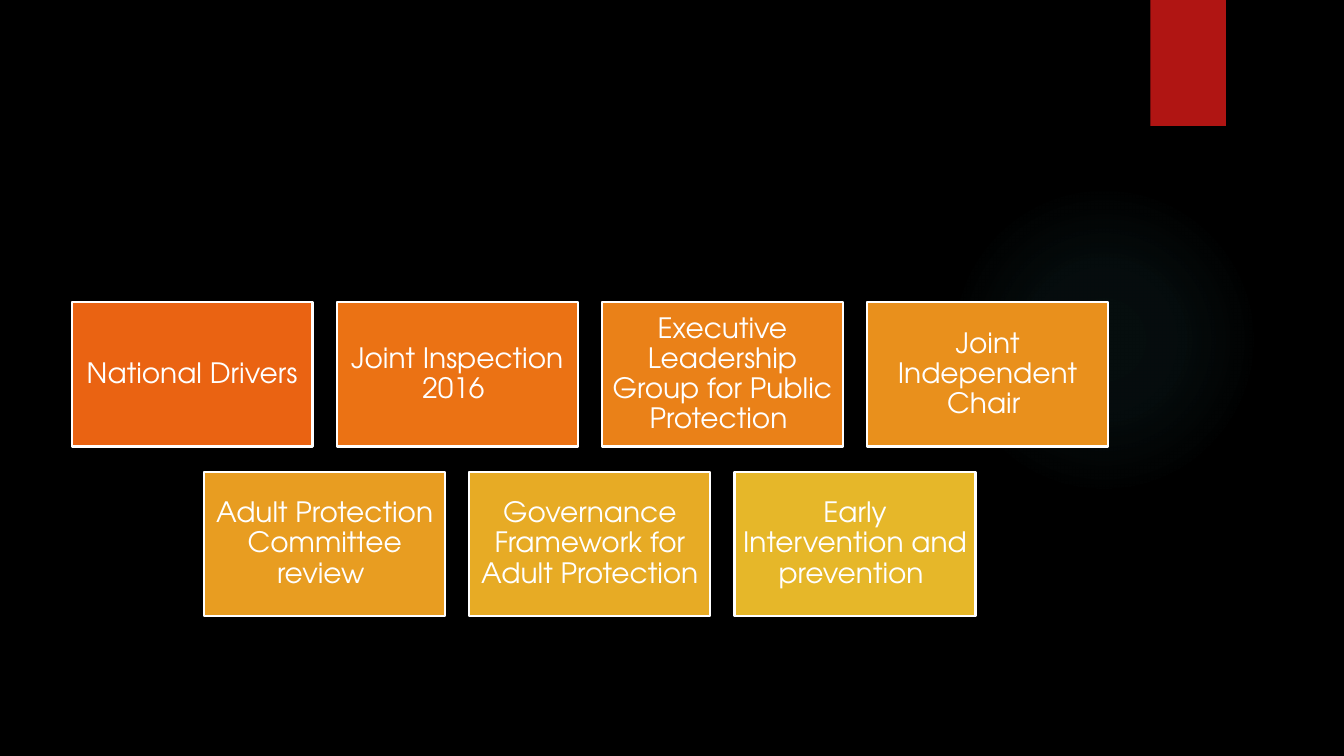
import pptx
import pptx.dml.color
import pptx.enum.shapes
import pptx.enum.text
import pptx.oxml
import pptx.oxml.ns
import pptx.util

WIDTH, HEIGHT = 13.33, 7.5
LEFT, TOP = 0.71, 3
CARD_W, CARD_H = 2.39, 1.43
STEP_X, STEP_Y = 2.63, 1.68
COLS = 4

COLORS = {"back": "000000", "flag": "B01513", "glow": "50B9C1", "text": "FFFFFF"}
GLOW_STOPS = [(0, 7), (36, 6), (69, 0), (100, 0)]

ROWS = [
    [
        ("National Drivers", "EA6312"),
        ("Joint Inspection 2016 ", "EB7214"),
        ("Executive Leadership Group for Public Protection ", "EA8118"),
        ("Joint Independent Chair ", "E9901C"),
    ],
    [
        ("Adult Protection Committee review ", "E89D21"),
        ("Governance Framework for Adult Protection ", "E7AB25"),
        ("Early Intervention and prevention ", "E6B729"),
    ],
]

FRAME = {
    "word_wrap": True,
    "vertical_anchor": pptx.enum.text.MSO_ANCHOR.MIDDLE,
    **{f"margin_{side}": pptx.util.Inches(0.08) for side in ("left", "top", "right", "bottom")},
}
PARA = {"alignment": pptx.enum.text.PP_ALIGN.CENTER, "line_spacing": 0.9}
FONT = {"name": "TeX Gyre Adventor", "size": pptx.util.Pt(20)}


def rgb(code):
    return pptx.dml.color.RGBColor.from_string(code)


def style(target, values):
    for name, value in values.items():
        setattr(target, name, value)


def add_shape(slide, kind, box):
    shape = slide.shapes.add_shape(kind, *map(pptx.util.Inches, box))
    shape.shadow.inherit = False
    shape.line.fill.background()
    return shape


def add_block(slide, box, color):
    block = add_shape(slide, pptx.enum.shapes.MSO_SHAPE.RECTANGLE, box)
    block.fill.solid()
    block.fill.fore_color.rgb = rgb(color)
    return block


def add_glow(slide, box):
    """Add a circle that fades from its centre to nothing."""
    glow = add_shape(slide, pptx.enum.shapes.MSO_SHAPE.OVAL, box)
    stops = "".join(
        f'<a:gs pos="{pos * 1000}"><a:srgbClr val="{COLORS["glow"]}">'
        f'<a:alpha val="{alpha * 1000}"/></a:srgbClr></a:gs>'
        for pos, alpha in GLOW_STOPS
    )
    fill = pptx.oxml.parse_xml(
        f'<a:gradFill {pptx.oxml.ns.nsdecls("a")}><a:gsLst>{stops}</a:gsLst>'
        '<a:path path="circle"><a:fillToRect l="50000" t="50000" r="50000" b="50000"/>'
        "</a:path></a:gradFill>"
    )
    glow.element.spPr.find(pptx.oxml.ns.qn("a:prstGeom")).addnext(fill)


def add_card(slide, col, row, text, color):
    box = (LEFT + col * STEP_X, TOP + row * STEP_Y, CARD_W, CARD_H)
    card = add_block(slide, box, color)
    card.line.color.rgb = rgb(COLORS["text"])
    card.line.width = pptx.util.Pt(1.5)
    style(card.text_frame, FRAME)
    para = card.text_frame.paragraphs[0]
    style(para, PARA)
    run = para.add_run()
    run.text = text
    style(run.font, FONT)
    run.font.color.rgb = rgb(COLORS["text"])


def main():
    deck = pptx.Presentation()
    deck.slide_width = pptx.util.Inches(WIDTH)
    deck.slide_height = pptx.util.Inches(HEIGHT)
    slide = deck.slides.add_slide(deck.slide_layouts[6])
    slide.background.fill.solid()
    slide.background.fill.fore_color.rgb = rgb(COLORS["back"])

    add_glow(slide, (9.41, 1.83, 3.08, 3.08))
    add_block(slide, (11.41, 0, 0.75, HEIGHT / 6), COLORS["flag"])
    for row, cards in enumerate(ROWS):
        shift = (COLS - len(cards)) / 2
        for col, (text, color) in enumerate(cards):
            add_card(slide, col + shift, row, text, color)
    deck.save("out.pptx")


if __name__ == "__main__":
    main()
